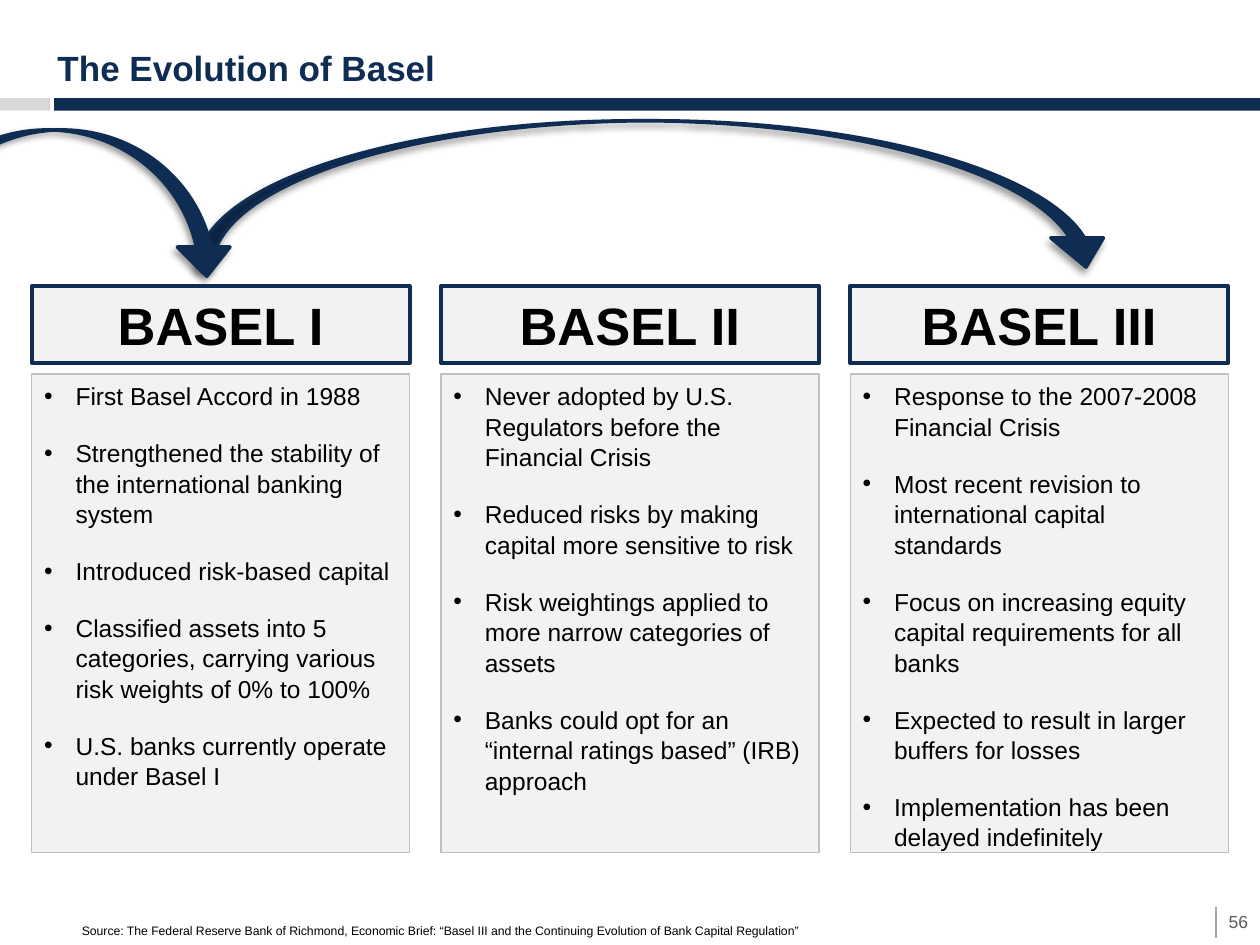
"""Build a slide comparing the three Basel accords."""
from lxml import etree
from pptx import Presentation
from pptx import util as u
from pptx.dml.color import RGBColor
from pptx.enum import shapes, text
from pptx.oxml import parse_xml
from pptx.oxml.ns import nsdecls, qn

NAVY = RGBColor(0x0F, 0x2D, 0x53)
BLACK = RGBColor(0, 0, 0)
PALE = RGBColor(0xF2, 0xF2, 0xF2)
LIGHT = RGBColor(0xD9, 0xD9, 0xD9)
SILVER = RGBColor(0xBF, 0xBF, 0xBF)
GREY = RGBColor(0xA6, 0xA6, 0xA6)
DARK = RGBColor(0x59, 0x59, 0x59)

LEFT, PITCH, WIDTH = 0.64, 8.25, 7.62
ACCORDS = {
    "BASEL I": [
        "First Basel Accord in 1988",
        "Strengthened the stability of the international banking system",
        "Introduced risk-based capital",
        "Classified assets into 5 categories, carrying various risk weights of 0% to 100%",
        "U.S. banks currently operate under Basel I",
    ],
    "BASEL II": [
        "Never adopted by U.S. Regulators before the Financial Crisis",
        "Reduced risks by making capital more sensitive to risk",
        "Risk weightings applied to more narrow categories of assets",
        "Banks could opt for an “internal ratings based” (IRB) approach",
    ],
    "BASEL III": [
        "Response to the 2007-2008 Financial Crisis",
        "Most recent revision to international capital standards",
        "Focus on increasing equity capital requirements for all banks",
        "Expected to result in larger buffers for losses",
        "Implementation has been delayed indefinitely",
    ],
}
SOURCE = ("Source: The Federal Reserve Bank of Richmond, Economic Brief: "
          "“Basel III and the Continuing Evolution of Bank Capital Regulation”")
BODY = {"size": u.Pt(14)}
HEADING = {"size": u.Pt(30), "bold": True}
TITLE = {"size": u.Pt(20), "bold": True}
FOOTNOTE = {"size": u.Pt(7)}
NUMBER = {"size": u.Pt(10)}


def cms(*lengths):
    """Turn numbers into centimetre lengths."""
    return [u.Cm(length) for length in lengths]


def add_panel(page, place, fill, line=None, weight=0,
              kind=shapes.MSO_SHAPE.RECTANGLE):
    """Add a filled shape, outlined if a line colour is given."""
    panel = page.shapes.add_shape(kind, *cms(*place))
    panel.shadow.inherit = False
    panel.fill.solid()
    panel.fill.fore_color.rgb = fill
    if line is None:
        panel.line.fill.background()
    else:
        panel.line.color.rgb = line
        panel.line.width = u.Pt(weight)
    return panel


def write(box, lines, style, color=BLACK, anchor=text.MSO_ANCHOR.MIDDLE,
          align=text.PP_ALIGN.LEFT, bulleted=False):
    """Fill a box with one paragraph per line."""
    frame = box.text_frame
    frame.word_wrap = True
    frame.vertical_anchor = anchor
    for index, line in enumerate(lines):
        para = frame.add_paragraph() if index else frame.paragraphs[0]
        para.alignment = align
        if bulleted:
            add_bullet(para)
            para.line_spacing = 1.04
            if index:
                para.space_before = u.Pt(15)
        span = para.add_run()
        span.text = line
        for name, value in {"name": "Arial", **style}.items():
            setattr(span.font, name, value)
        span.font.color.rgb = color


def add_bullet(para):
    """Give a paragraph a hanging round bullet."""
    props = para._p.get_or_add_pPr()
    indent = u.Inches(0.25)
    props.set("marL", str(indent))
    props.set("indent", str(-indent))
    etree.SubElement(props, qn("a:buFont")).set("typeface", "Arial")
    etree.SubElement(props, qn("a:buChar")).set("char", "•")


def add_text(page, place, line, style, **options):
    """Add a text box holding one line."""
    write(page.shapes.add_textbox(*cms(*place)), [line], style, **options)


def add_arc(page, place):
    """Add a curved arrow that arches over the columns and casts a shadow."""
    arc = add_panel(page, place, NAVY, NAVY, 2,
                    shapes.MSO_SHAPE.CURVED_RIGHT_ARROW)
    for index, value in enumerate((0.1, 0.36, 0.2)):
        arc.adjustments[index] = value
    arc.rotation = 270
    props = arc._element.spPr
    props.find(qn("a:xfrm")).set("flipH", "1")
    props.find(qn("a:effectLst")).append(parse_xml(
        f'<a:outerShdw {nsdecls("a")} blurRad="{u.Pt(4)}" dist="{u.Pt(3)}" '
        'dir="8100000" algn="tr" rotWithShape="0"><a:srgbClr val="000000">'
        '<a:alpha val="40000"/></a:srgbClr></a:outerShdw>'))


def add_rule(page, ends):
    """Add the thin line beside the page number."""
    rule = page.shapes.add_connector(shapes.MSO_CONNECTOR.STRAIGHT, *cms(*ends))
    rule.line.color.rgb = GREY
    rule.line.width = u.Pt(1.25)
    etree.SubElement(rule._element.spPr, qn("a:effectLst"))


def add_accord(page, column, name, points):
    """Add one column: heading above its bullet points."""
    left = LEFT + column * PITCH
    heading = add_panel(page, (left, 5.77, WIDTH, 1.55), PALE, NAVY, 2.25)
    write(heading, [name], HEADING, align=text.PP_ALIGN.CENTER)
    body = add_panel(page, (left, 7.54, WIDTH, 9.65), PALE, SILVER, 0.75)
    write(body, points, BODY, anchor=text.MSO_ANCHOR.TOP, bulleted=True)


def main():
    """Build and save the deck."""
    deck = Presentation()
    deck.slide_width, deck.slide_height = cms(25.4, 19.05)
    page = deck.slides.add_slide(deck.slide_layouts[6])
    add_panel(page, (0, 1.98, 1.02, 0.25), LIGHT)
    add_panel(page, (1.09, 1.98, 24.31, 0.25), NAVY)
    add_text(page, (0.91, 0.64, 22.86, 1.27), "The Evolution of Basel", TITLE,
             color=NAVY, anchor=text.MSO_ANCHOR.BOTTOM)
    for column, (name, points) in enumerate(ACCORDS.items()):
        add_accord(page, column, name, points)
    add_arc(page, (11.73, -5.31, 2.95, 18.44))
    add_arc(page, (-0.18, 0.69, 2.95, 6.81))
    add_text(page, (1.4, 18.47, 22.86, 0.56), SOURCE, FOOTNOTE,
             anchor=text.MSO_ANCHOR.BOTTOM)
    add_rule(page, (24.51, 18.29, 24.51, 18.9))
    add_text(page, (24.38, 18.06, 1.17, 1.02), "56", NUMBER, color=DARK,
             align=text.PP_ALIGN.CENTER)
    deck.save("out.pptx")


if __name__ == "__main__":
    main()
